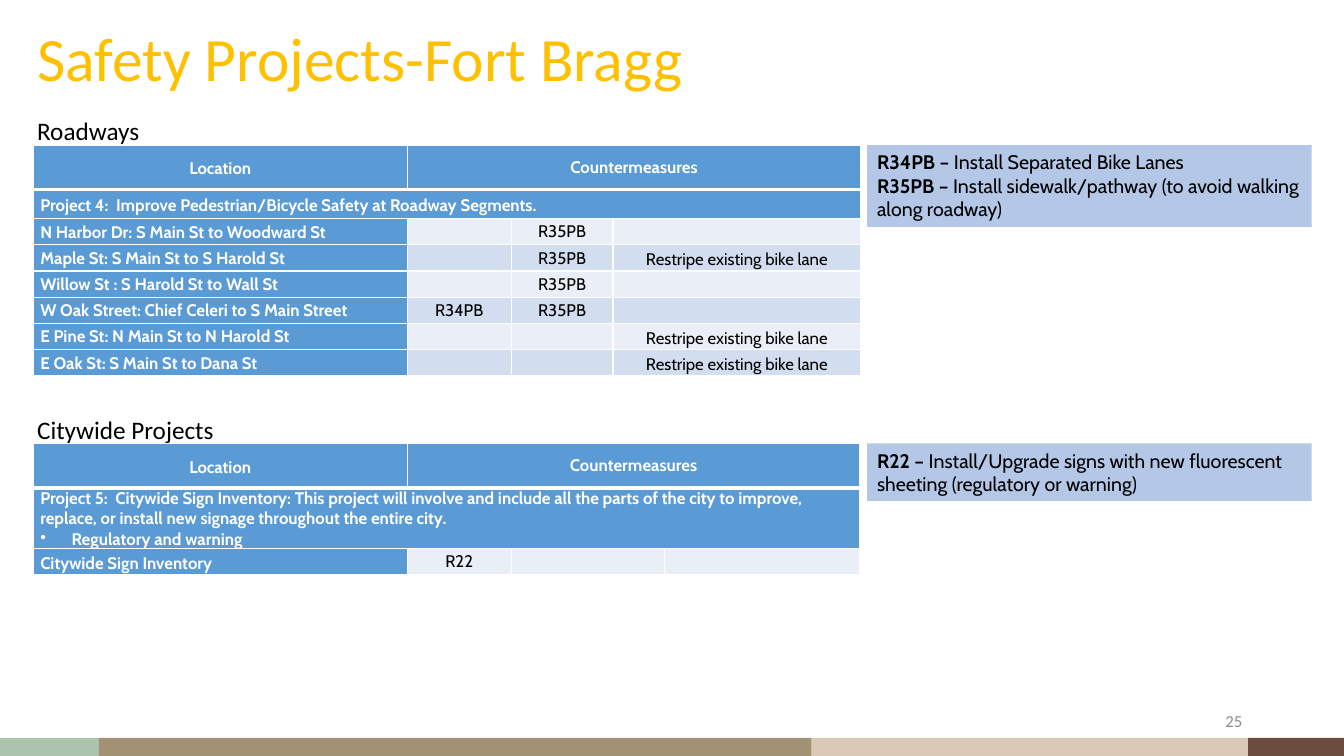
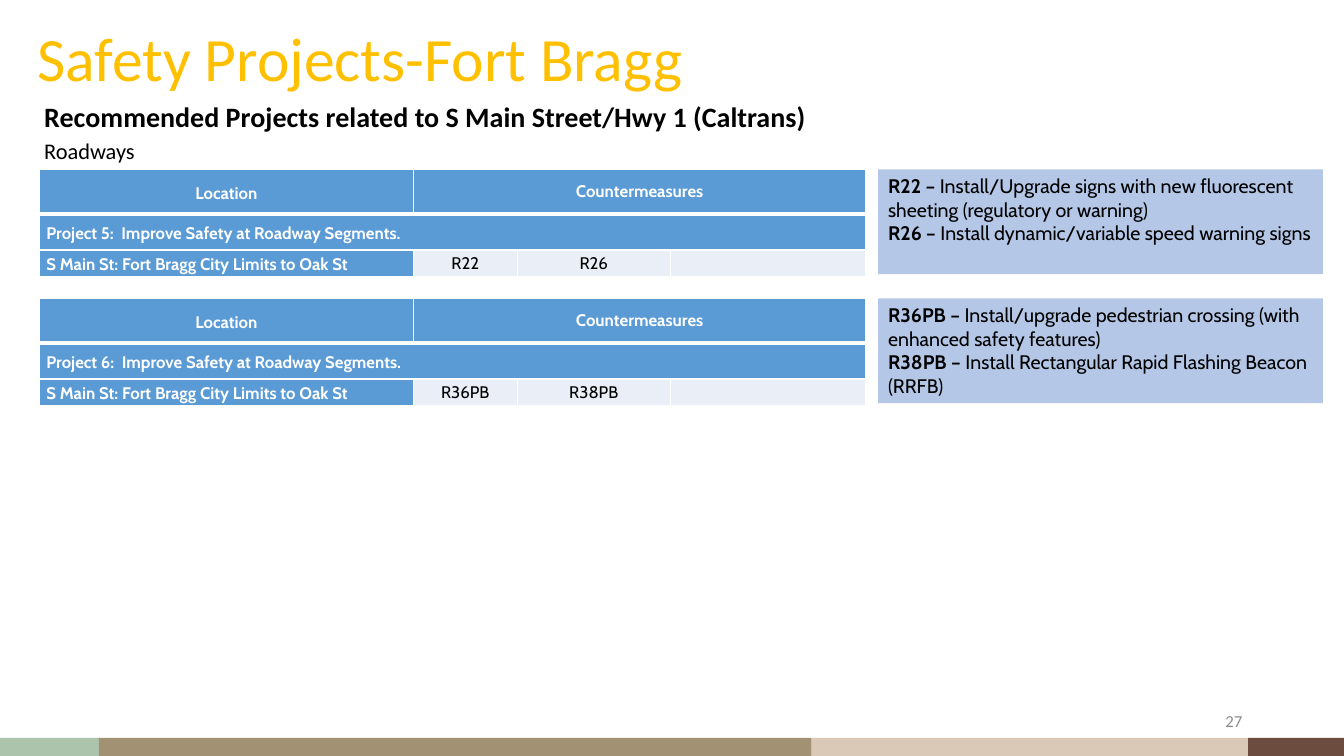
from lxml import etree
from pptx import Presentation
from pptx.dml.color import RGBColor
from pptx.enum.shapes import MSO_SHAPE
from pptx.enum.text import MSO_ANCHOR, MSO_AUTO_SIZE, PP_ALIGN
from pptx.oxml.ns import qn
from pptx.util import Inches, Pt

LEFT, CENTER, RIGHT = PP_ALIGN.LEFT, PP_ALIGN.CENTER, PP_ALIGN.RIGHT
TOP, MIDDLE = MSO_ANCHOR.TOP, MSO_ANCHOR.MIDDLE
RECTANGLE = MSO_SHAPE.RECTANGLE
NO_AUTOFIT = MSO_AUTO_SIZE.NONE

# Shared colours, fonts and sizes
WHITE, BLACK, GOLD, GRAY = "FFFFFF", "000000", "FFC000", "8C8C8C"
TABLE_BLUE, NOTE_BLUE = "5B9BD5", "B4C7E7"
ROW_TINTS = ["EAEFF7", "D2DEEF"]
BANDS = [("ACC4AC", 0.98), ("A29172", 7.07), ("DBC9B7", 4.33), ("6C4C3E", 0.95)]
HEADING_FONT, BODY_FONT = "Calibri", "Cabin"
HEADER_HEIGHT, ROW_HEIGHT = 0.44, 0.26
NOTE_WIDTH = 4.41
CODE_COLUMNS = [3.71, 1.03, 1.52, 1.94]
color = RGBColor.from_string


def write_text(frame, paragraphs, size=12, font=BODY_FONT, ink=BLACK, bold=False,
               align=LEFT, anchor=TOP, spacing=1.0, bullets_from=None):
    """Write paragraphs; a (lead, rest) pair gets a bold lead."""
    frame.word_wrap = True
    frame.vertical_anchor = anchor
    for index, content in enumerate(paragraphs):
        paragraph = frame.paragraphs[0] if index == 0 else frame.add_paragraph()
        if bullets_from is not None and index >= bullets_from:
            properties = paragraph._p.get_or_add_pPr()
            properties.set("marL", str(Inches(0.31)))
            properties.set("indent", str(-Inches(0.31)))
            etree.SubElement(properties, qn("a:buChar"), char="•")
        paragraph.alignment = align
        paragraph.line_spacing = spacing
        if not content:
            etree.SubElement(paragraph._p, qn("a:endParaRPr"), sz=str(size * 100))
            continue
        pieces = [(content, bold)] if isinstance(content, str) else zip(content, (True, False))
        for text, heavy in pieces:
            run = paragraph.add_run()
            run.text = text
            run.font.size = Pt(size)
            run.font.name = font
            run.font.bold = heavy
            run.font.color.rgb = color(ink)


def format_cell(cell, paragraphs, fill, top_line=1, bottom_line=1, **text_format):
    """Fill a table cell, rule its sides in white and write its text."""
    cell.margin_left = cell.margin_right = Inches(0.07)
    cell.margin_top = cell.margin_bottom = 0
    properties = cell._tc.get_or_add_tcPr()
    for side, width in (("L", 1), ("R", 1), ("T", top_line), ("B", bottom_line)):
        line = etree.SubElement(properties, qn(f"a:ln{side}"), w=str(Pt(width)))
        line_fill = etree.SubElement(line, qn("a:solidFill"))
        etree.SubElement(line_fill, qn("a:srgbClr"), val=WHITE)
    cell.fill.solid()
    cell.fill.fore_color.rgb = color(fill)
    write_text(cell.text_frame, paragraphs, **text_format)
    cell.vertical_anchor = text_format.get("anchor", TOP)


# Content: labels are (text, left, top, width, height, size, bold)
SIGN_NOTE = ("R22 – ", "Install/Upgrade signs with new fluorescent sheeting (regulatory or warning)")
RESTRIPE = "Restripe existing bike lane"
MAIN_STREET = "S Main St: Fort Bragg City Limits to Oak St"
SLIDES = [
    {
        "number": "25",
        "labels": [
            ("Roadways", 0.27, 1.09, 5.93, 0.4, 18, False),
            ("Citywide Projects", 0.27, 4.06, 5.93, 0.4, 18, False),
        ],
        "table_left": 0.33,
        "note_left": 8.6,
        "projects": [
            {
                "top": 1.44, "columns": [3.71, 1.03, 1.01, 2.46],
                "title": ["Project 4:  Improve Pedestrian/Bicycle Safety at Roadway Segments."],
                "title_height": 0.29, "location_anchor": TOP,
                "rows": [
                    ("N Harbor Dr: S Main St to Woodward St", "", "R35PB", ""),
                    ("Maple St: S Main St to S Harold St", "", "R35PB", RESTRIPE),
                    ("Willow St : S Harold St to Wall St", "", "R35PB", ""),
                    ("W Oak Street: Chief Celeri to S Main Street", "R34PB", "R35PB", ""),
                    ("E Pine St: N Main St to N Harold St", "", "", RESTRIPE),
                    ("E Oak St: S Main St to Dana St", "", "", RESTRIPE),
                ],
                "notes": [
                    ("R34PB – ", "Install Separated Bike Lanes"),
                    ("R35PB – ", "Install sidewalk/pathway (to avoid walking along roadway)"),
                ],
                "note_height": 0.81,
            },
            {
                "top": 4.4, "columns": CODE_COLUMNS,
                "title": [
                    "Project 5:  Citywide Sign Inventory: This project will involve and include "
                    "all the parts of the city to improve, replace, or install new signage "
                    "throughout the entire city.",
                    "Regulatory and warning",
                ],
                "title_height": 0.6, "location_anchor": MIDDLE,
                "rows": [("Citywide Sign Inventory", "R22", "", "")],
                "notes": [SIGN_NOTE],
                "note_height": 0.57,
            },
        ],
    },
    {
        "number": "27",
        "labels": [
            ("Recommended Projects related to S Main Street/Hwy 1 (Caltrans)",
             0.34, 0.94, 8.69, 0.44, 20, True),
            ("Roadways", 0.34, 1.31, 5.93, 0.37, 16, False),
        ],
        "table_left": 0.39,
        "note_left": 8.71,
        "projects": [
            {
                "top": 1.68, "columns": CODE_COLUMNS,
                "title": ["Project 5:  Improve Safety at Roadway Segments."],
                "title_height": 0.36, "location_anchor": MIDDLE,
                "rows": [(MAIN_STREET, "R22", "R26", "")],
                "notes": [
                    SIGN_NOTE,
                    ("R26 – ", "Install dynamic/variable speed warning signs"),
                ],
                "note_height": 1.04,
            },
            {
                "top": 2.96, "columns": CODE_COLUMNS,
                "title": ["Project 6:  Improve Safety at Roadway Segments."],
                "title_height": 0.36, "location_anchor": MIDDLE,
                "rows": [(MAIN_STREET, "R36PB", "R38PB", "")],
                "notes": [
                    ("R36PB – ", "Install/upgrade pedestrian crossing (with enhanced safety features)"),
                    ("R38PB – ", "Install Rectangular Rapid Flashing Beacon (RRFB)"),
                ],
                "note_height": 1.04,
            },
        ],
    },
]

presentation = Presentation()
presentation.slide_width = Inches(13.33)
presentation.slide_height = Inches(7.5)
layout = presentation.slide_layouts[5]
slides = [presentation.slides.add_slide(layout) for _ in SLIDES]

# Footer bands, moved to the layout that both slides share
band_left = 0
for band_color, band_width in BANDS:
    band = slides[0].shapes.add_shape(
        RECTANGLE, Inches(band_left), Inches(7.32), Inches(band_width), Inches(0.18))
    band.shadow.inherit = False
    band.fill.solid()
    band.fill.fore_color.rgb = color(band_color)
    band.line.fill.background()
    layout.shapes.element.append(band.element)
    band_left += band_width

for slide, content in zip(slides, SLIDES):
    # Title
    title = slide.shapes.title
    title.left, title.top = Inches(0.27), Inches(-0.11)
    title.width, title.height = Inches(11.5), Inches(1.45)
    title.text_frame.auto_size = NO_AUTOFIT
    write_text(title.text_frame, ["Safety Projects-Fort Bragg"], size=44,
               font=HEADING_FONT, ink=GOLD, anchor=MIDDLE, spacing=0.9)

    # Page number
    page_number = slide.shapes.add_textbox(Inches(9.42), Inches(6.95), Inches(3), Inches(0.4))
    write_text(page_number.text_frame, [content["number"]], font=HEADING_FONT,
               ink=GRAY, align=RIGHT, anchor=MIDDLE)

    # Section labels
    for text, left, top, width, height, size, bold in content["labels"]:
        label = slide.shapes.add_textbox(Inches(left), Inches(top), Inches(width), Inches(height))
        write_text(label.text_frame, [text], size=size, font=HEADING_FONT, bold=bold)

    for project in content["projects"]:
        # Project table
        heights = [HEADER_HEIGHT, project["title_height"]] + [ROW_HEIGHT] * len(project["rows"])
        columns = project["columns"]
        table = slide.shapes.add_table(
            len(heights), len(columns), Inches(content["table_left"]), Inches(project["top"]),
            Inches(sum(columns)), Inches(sum(heights))).table
        table.first_row = table.horz_banding = False
        for column, width in zip(table.columns, columns):
            column.width = Inches(width)
        for row, height in zip(table.rows, heights):
            row.height = Inches(height)
        table.cell(0, 1).merge(table.cell(0, 3))
        table.cell(1, 0).merge(table.cell(1, 3))

        for index, heading in enumerate(["Location", "Countermeasures", "", ""]):
            format_cell(table.cell(0, index), [heading], TABLE_BLUE, bottom_line=3, ink=WHITE,
                        bold=True, align=CENTER, anchor=MIDDLE,
                        spacing=1.15 if index == 0 else 1.0)
        for index in range(len(columns)):
            lines = project["title"] if index == 0 else [""]
            format_cell(table.cell(1, index), lines, TABLE_BLUE, top_line=3, ink=WHITE,
                        bold=True, anchor=MIDDLE, bullets_from=1,
                        spacing=1.15 if len(lines) == 1 else 1.0)
        for row_index, (location, *measures) in enumerate(project["rows"]):
            format_cell(table.cell(row_index + 2, 0), [location], TABLE_BLUE, ink=WHITE,
                        bold=True, anchor=project["location_anchor"], spacing=1.15)
            for index, measure in enumerate(measures, start=1):
                format_cell(table.cell(row_index + 2, index), [measure],
                            ROW_TINTS[row_index % 2], align=CENTER, anchor=MIDDLE,
                            spacing=1.15 if index == 3 else 1.0)

        # Countermeasure key
        note = slide.shapes.add_shape(
            RECTANGLE, Inches(content["note_left"]), Inches(project["top"]),
            Inches(NOTE_WIDTH), Inches(project["note_height"]))
        note.shadow.inherit = False
        note.fill.solid()
        note.fill.fore_color.rgb = color(NOTE_BLUE)
        note.line.fill.background()
        write_text(note.text_frame, project["notes"], size=14)

presentation.save("out.pptx")
